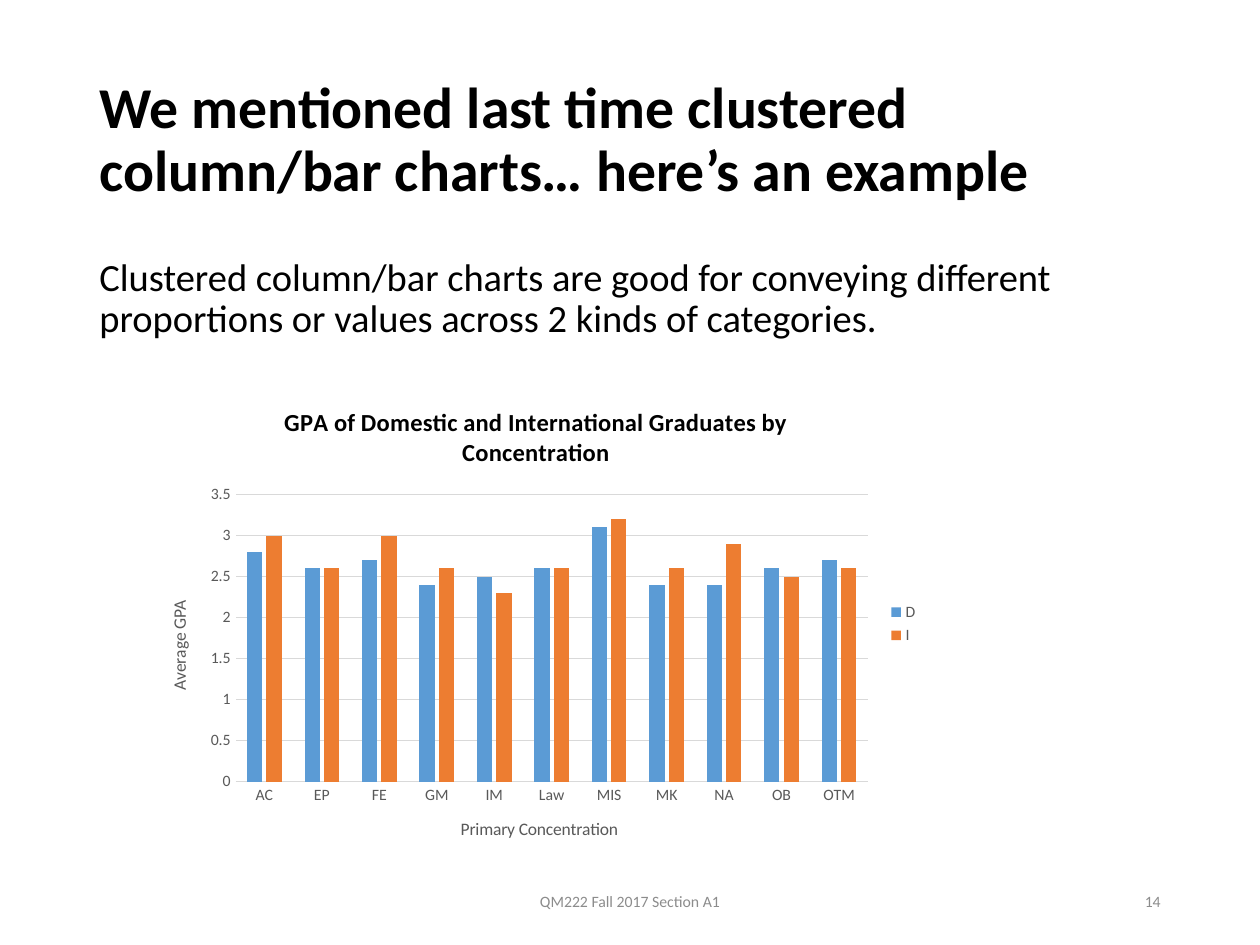
from lxml import etree
from pptx import Presentation
from pptx.chart.data import CategoryChartData
from pptx.dml.color import RGBColor
from pptx.enum.chart import XL_CHART_TYPE, XL_LEGEND_POSITION, XL_TICK_MARK
from pptx.enum.text import MSO_ANCHOR, MSO_AUTO_SIZE, PP_ALIGN
from pptx.oxml.ns import qn
from pptx.util import Cm, Pt

CLUSTERED = XL_CHART_TYPE.COLUMN_CLUSTERED
LEGEND_RIGHT = XL_LEGEND_POSITION.RIGHT
NO_TICK = XL_TICK_MARK.NONE
TOP, MIDDLE = MSO_ANCHOR.TOP, MSO_ANCHOR.MIDDLE
LEFT, CENTER, RIGHT = PP_ALIGN.LEFT, PP_ALIGN.CENTER, PP_ALIGN.RIGHT
NO_FIT = MSO_AUTO_SIZE.NONE

BLACK = RGBColor(0x00, 0x00, 0x00)
DARK_GRAY = RGBColor(0x59, 0x59, 0x59)
FOOTER_GRAY = RGBColor(0x8C, 0x8C, 0x8C)
GRID_GRAY = RGBColor(0xD9, 0xD9, 0xD9)
BLUE = RGBColor(0x5B, 0x9B, 0xD5)
ORANGE = RGBColor(0xED, 0x7D, 0x31)

CONCENTRATIONS = ["AC", "EP", "FE", "GM", "IM", "Law", "MIS", "MK", "NA", "OB", "OTM"]
GPA_SERIES = [
    ("D", BLUE, [2.8, 2.6, 2.7, 2.4, 2.5, 2.6, 3.1, 2.4, 2.4, 2.6, 2.7]),
    ("I", ORANGE, [3, 2.6, 3, 2.6, 2.3, 2.6, 3.2, 2.6, 2.9, 2.5, 2.6]),
]
PLOT_LAYOUT = {"x": 0.12, "y": 0.23, "w": 0.8, "h": 0.6}


class SlideBuilder:
    font_name = "Calibri"

    def __init__(self, presentation):
        self.slide = presentation.slides.add_slide(presentation.slide_layouts[1])

    def style_font(self, font, size, color, bold=False):
        font.name = self.font_name
        font.size = Pt(size)
        font.bold = bold
        font.color.rgb = color

    def place(self, shape, left, top, width, height):
        shape.left, shape.top = Cm(left), Cm(top)
        shape.width, shape.height = Cm(width), Cm(height)

    def add_text(self, frame, text, size, color, bold=False, align=LEFT, anchor=MIDDLE):
        frame.word_wrap = True
        frame.auto_size = NO_FIT
        frame.vertical_anchor = anchor
        paragraph = frame.paragraphs[0]
        paragraph.alignment = align
        run = paragraph.add_run()
        run.text = text
        self.style_font(run.font, size, color, bold)
        return paragraph

    def title(self, text, *box):
        shape = self.slide.shapes.title
        self.place(shape, *box)
        paragraph = self.add_text(shape.text_frame, text, 33, BLACK, bold=True)
        paragraph.line_spacing = 0.9

    def body(self, text, *box):
        shape = self.slide.placeholders[1]
        self.place(shape, *box)
        paragraph = self.add_text(shape.text_frame, text, 22, BLACK, anchor=TOP)
        paragraph.line_spacing = 0.9
        paragraph.space_before = Pt(7.5)
        properties = paragraph._p.get_or_add_pPr()
        properties.set("marL", "0")
        properties.set("indent", "0")
        etree.SubElement(properties, qn("a:buNone"))

    def footer(self, text, align, *box):
        shape = self.slide.shapes.add_textbox(*(Cm(length) for length in box))
        self.add_text(shape.text_frame, text, 9, FOOTER_GRAY, align=align)

    def chart_text(self, frame, text, size, color, bold=False):
        run = frame.paragraphs[0].add_run()
        run.text = text
        self.style_font(run.font, size, color, bold)

    def axis(self, axis, title):
        self.chart_text(axis.axis_title.text_frame, title, 10, DARK_GRAY)
        self.style_font(axis.tick_labels.font, 9, DARK_GRAY)
        axis.major_tick_mark = axis.minor_tick_mark = NO_TICK

    def line(self, line):
        line.color.rgb = GRID_GRAY
        line.width = Pt(0.75)

    def plot_layout(self, chart):
        plot_area = chart._chartSpace.chart.plotArea
        for old_layout in plot_area.findall(qn("c:layout")):
            plot_area.remove(old_layout)
        layout = etree.Element(qn("c:layout"))
        manual = etree.SubElement(layout, qn("c:manualLayout"))
        settings = {"layoutTarget": "inner", "xMode": "edge", "yMode": "edge", **PLOT_LAYOUT}
        for name, value in settings.items():
            etree.SubElement(manual, qn(f"c:{name}")).set("val", str(value))
        plot_area.insert(0, layout)

    def column_chart(self, title, category_title, value_title, *box):
        data = CategoryChartData()
        data.categories = CONCENTRATIONS
        for name, _, values in GPA_SERIES:
            data.add_series(name, values)
        lengths = (Cm(length) for length in box)
        chart = self.slide.shapes.add_chart(CLUSTERED, *lengths, data).chart
        self.style_font(chart.font, 10, BLACK)
        self.chart_text(chart.chart_title.text_frame, title, 14, BLACK, bold=True)
        chart.chart_title.include_in_layout = False

        self.axis(chart.category_axis, category_title)
        self.line(chart.category_axis.format.line)
        value_axis = chart.value_axis
        self.axis(value_axis, value_title)
        value_axis.minimum_scale, value_axis.maximum_scale = 0, 3.5
        value_axis.major_unit = 0.5
        value_axis.format.line.fill.background()
        self.line(value_axis.major_gridlines.format.line)

        chart.has_legend = True
        chart.legend.position = LEGEND_RIGHT
        chart.legend.include_in_layout = False
        self.style_font(chart.legend.font, 9, DARK_GRAY)

        plot = chart.plots[0]
        plot.vary_by_categories = False
        plot.gap_width, plot.overlap = 150, -27
        for series, (_, color, _) in zip(plot.series, GPA_SERIES):
            series.format.fill.solid()
            series.format.fill.fore_color.rgb = color
        self.plot_layout(chart)


def main():
    presentation = Presentation()
    presentation.slide_width, presentation.slide_height = Cm(25.4), Cm(19.05)
    builder = SlideBuilder(presentation)
    builder.title(
        "We mentioned last time clustered column/bar charts… here’s an example",
        1.75, 1.01, 21.9, 3.68,
    )
    builder.body(
        "Clustered column/bar charts are good for conveying different "
        "proportions or values across 2 kinds of categories.",
        1.75, 5.07, 21.9, 12.09,
    )
    builder.footer("QM222 Fall 2017 Section A1", CENTER, 8.41, 17.66, 8.58, 1.01)
    builder.footer("14", RIGHT, 17.94, 17.66, 5.71, 1.01)
    builder.column_chart(
        "GPA of Domestic and International Graduates by Concentration",
        "Primary Concentration", "Average GPA",
        2.84, 7.75, 15.93, 9.65,
    )
    presentation.save("out.pptx")


if __name__ == "__main__":
    main()
